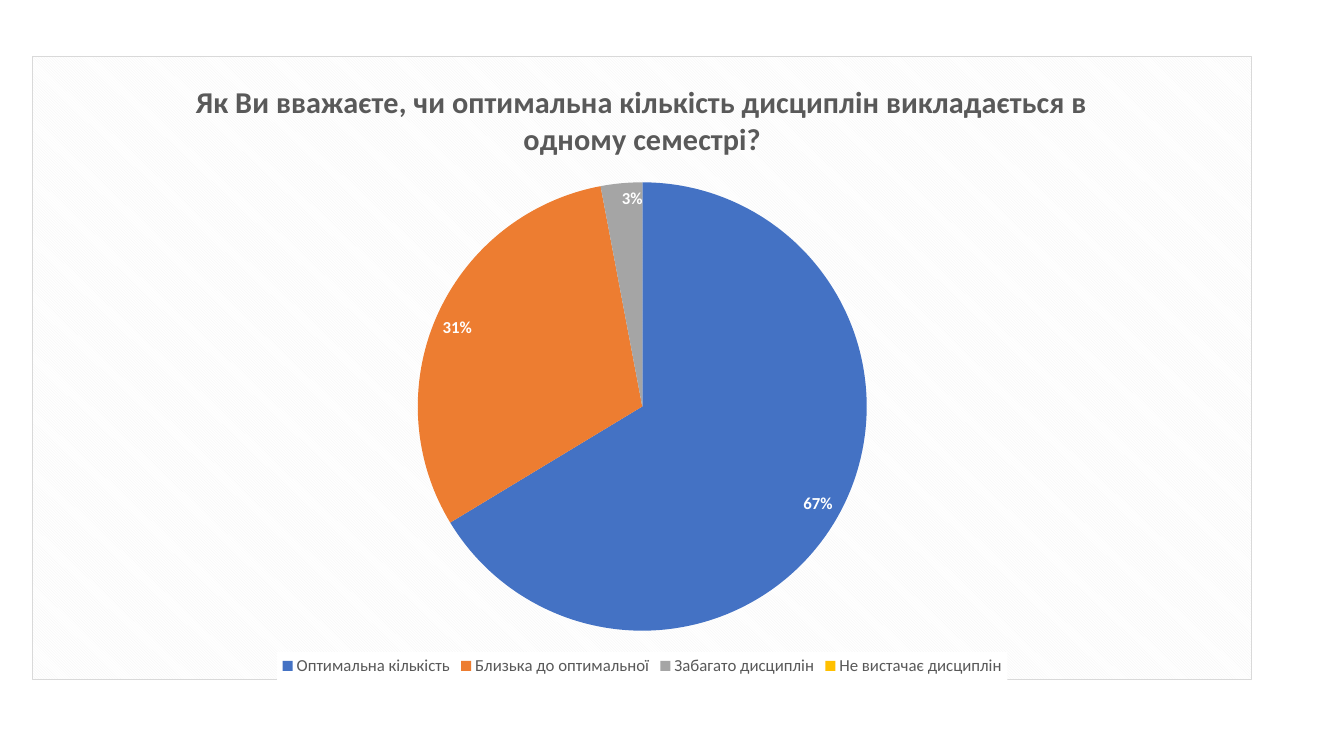
from lxml import etree
from pptx import Presentation
from pptx import util as u
from pptx.chart.data import CategoryChartData
from pptx.dml.color import RGBColor
from pptx.enum import chart as ch
from pptx.oxml.ns import qn

QUESTION = "Як Ви вважаєте, чи оптимальна кількість дисциплін викладається в одному семестрі?"
ANSWERS = [  # answer, percent, slice colour
    ("Оптимальна кількість", 67, "4472C4"),
    ("Близька до оптимальної", 31, "ED7D31"),
    ("Забагато дисциплін", 3, "A5A5A5"),
    ("Не вистачає дисциплін", 0, "FFC000"),
]
GREY = "595959"
CHART_BOX = (0.32, 0.56, 12.1, 6.19)
NS = ('xmlns:c="http://schemas.openxmlformats.org/drawingml/2006/chart" '
      'xmlns:a="http://schemas.openxmlformats.org/drawingml/2006/main"')
HATCHED_FRAME = (
    '<a:pattFill prst="dkDnDiag"><a:fgClr><a:srgbClr val="F2F2F2"/></a:fgClr>'
    '<a:bgClr><a:srgbClr val="FFFFFF"/></a:bgClr></a:pattFill>'
    '<a:ln w="9525"><a:solidFill><a:srgbClr val="D9D9D9"/></a:solidFill></a:ln>')
WHITE_PANEL = '<a:solidFill><a:srgbClr val="FFFFFF"/></a:solidFill>'


def color(value):
    return RGBColor.from_string(value)


def style(font, size, fill, bold=False):
    font.name, font.size, font.bold = "Calibri", u.Pt(size), bold
    font.color.rgb = color(fill)


def write(frame, wording, **look):
    run = frame.paragraphs[0].add_run()
    run.text = wording
    style(run.font, **look)


def add_background(parent, fill):
    """Put shape properties ahead of the text properties of a chart part."""
    background = etree.fromstring(f"<c:spPr {NS}>{fill}</c:spPr>")
    parent.find(qn("c:txPr")).addprevious(background)


def add_survey_pie(slide):
    survey = CategoryChartData(number_format="0")
    survey.categories = [answer for answer, _, _ in ANSWERS]
    survey.add_series(QUESTION, [percent for _, percent, _ in ANSWERS])
    box = [u.Inches(length) for length in CHART_BOX]
    pie = slide.shapes.add_chart(ch.XL_CHART_TYPE.PIE, *box, survey).chart
    style(pie.font, 10, "000000")
    add_background(pie._chartSpace, HATCHED_FRAME)

    pie.has_title = True
    pie.chart_title.include_in_layout = False
    write(pie.chart_title.text_frame, QUESTION, size=21.6, fill=GREY, bold=True)

    pie.has_legend = True
    pie.legend.position = ch.XL_LEGEND_POSITION.BOTTOM
    pie.legend.include_in_layout = False
    style(pie.legend.font, 12, GREY)
    add_background(pie.legend._element, WHITE_PANEL)

    plot = pie.plots[0]
    plot.vary_by_categories = True
    for index, (_, _, fill) in enumerate(ANSWERS):
        slice_fill = plot.series[0].points[index].format.fill
        slice_fill.solid()
        slice_fill.fore_color.rgb = color(fill)

    labels = plot.series[0].data_labels
    labels.show_value = True
    labels.show_percentage = False
    # Rounded shares add up to 101, so they are shown as given; zero stays hidden
    labels.number_format = '0"%";;'
    labels.number_format_is_linked = False
    labels.position = ch.XL_LABEL_POSITION.INSIDE_END
    style(labels.font, 12, "FFFFFF", bold=True)


def main():
    deck = Presentation()
    deck.slide_width, deck.slide_height = u.Inches(13.33), u.Inches(7.5)
    add_survey_pie(deck.slides.add_slide(deck.slide_layouts[6]))
    deck.save("out.pptx")


if __name__ == "__main__":
    main()
